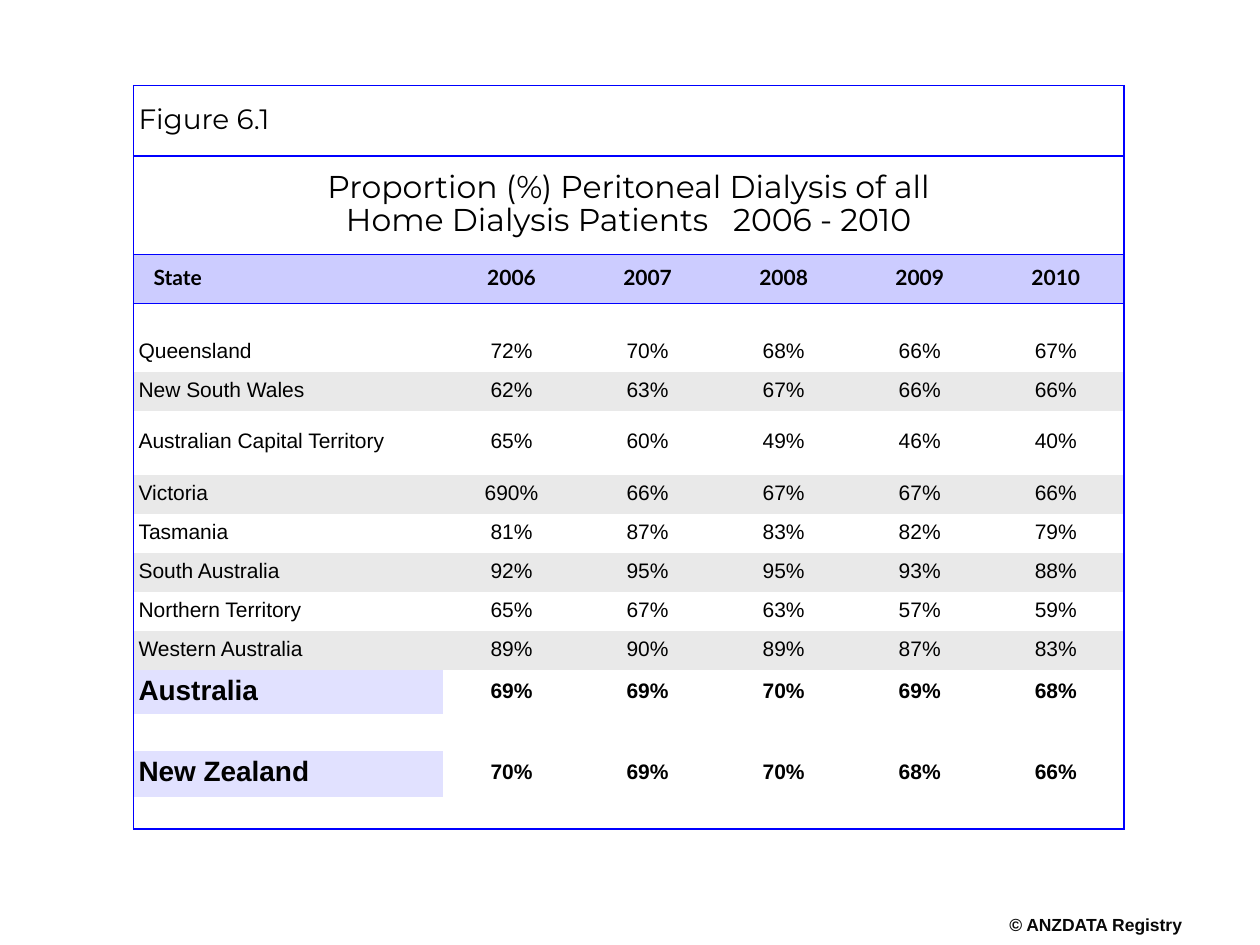
from lxml import etree
from pptx import Presentation
from pptx.dml.color import RGBColor
from pptx.enum.text import MSO_ANCHOR, PP_ALIGN
from pptx.oxml.ns import qn
from pptx.util import Inches, Pt

BLUE, BLACK = "0000FF", "000000"
HEADER_FILL, BAND_FILL, TOTAL_FILL = "CCCCFF", "E9E9E9", "E1E1FF"
NO_STYLE = "{2D5ABB26-0587-4C30-8999-92F81FD0307C}"

YEARS = ["2006", "2007", "2008", "2009", "2010"]
STATES = [
    ("Queensland", [72, 70, 68, 66, 67]),
    ("New South Wales", [62, 63, 67, 66, 66]),
    ("Australian Capital Territory", [65, 60, 49, 46, 40]),
    ("Victoria", [690, 66, 67, 67, 66]),
    ("Tasmania", [81, 87, 83, 82, 79]),
    ("South Australia", [92, 95, 95, 93, 88]),
    ("Northern Territory", [65, 67, 63, 57, 59]),
    ("Western Australia", [89, 90, 89, 87, 83]),
]
COUNTRIES = {12: ("Australia", [69, 69, 70, 69, 68]),
             14: ("New Zealand", [70, 69, 70, 68, 66])}
COLUMN_WIDTHS = [2.46] + [1.08] * 5
ROW_HEIGHTS = [0.56, 0.78, 0.39, 0.23, 0.31, 0.31, 0.51] + [0.31] * 5 + [0.35, 0.29, 0.37, 0.25]
TITLE_ROWS, HEADER_ROW, FIRST_STATE_ROW = 2, 2, 4
SPACER_ROWS = [3, 13, 15]


def rgb(color):
    return RGBColor.from_string(color)


def format_text(frame, size, font, color=BLACK, bold=False, align=PP_ALIGN.LEFT, after=0):
    for paragraph in frame.paragraphs:
        paragraph.alignment = align
        paragraph.line_spacing = 0.85
        paragraph.space_after = Pt(after)
        for run in paragraph.runs:
            run.font.size = Pt(size)
            run.font.name = font
            run.font.bold = bold
            run.font.color.rgb = rgb(color)


def set_borders(cell, sides):
    properties = cell._tc.get_or_add_tcPr()
    for side in "LRTB":
        line = etree.SubElement(properties, qn(f"a:ln{side}"), w=str(Pt(1)))
        if side in sides:
            fill = etree.SubElement(line, qn("a:solidFill"))
            etree.SubElement(fill, qn("a:srgbClr"), val=BLUE)
        else:
            etree.SubElement(line, qn("a:noFill"))


def prepare_cell(table, row, column):
    """Give a cell its margins, anchor, outer frame and the rules of the heading rows."""
    cell = table.cell(row, column)
    cell.margin_left = cell.margin_right = Inches(0.04)
    cell.margin_top = cell.margin_bottom = Inches(0.02)
    cell.vertical_anchor = MSO_ANCHOR.MIDDLE
    ruled = {"L": column == 0 or row < TITLE_ROWS,
             "R": column == len(COLUMN_WIDTHS) - 1 or row < TITLE_ROWS,
             "T": row <= HEADER_ROW + 1,
             "B": row <= HEADER_ROW or row == len(ROW_HEIGHTS) - 1}
    set_borders(cell, [side for side, shown in ruled.items() if shown])
    cell.fill.background()
    if row in SPACER_ROWS:
        paragraph = cell.text_frame.paragraphs[0]
        etree.SubElement(paragraph._p, qn("a:endParaRPr"), sz="800")


def fill_cell(cell, text, fill=None, **style):
    cell.text_frame.text = text
    format_text(cell.text_frame, **style)
    if fill:
        cell.fill.solid()
        cell.fill.fore_color.rgb = rgb(fill)


def add_title_rows(table):
    for row in range(TITLE_ROWS):
        table.cell(row, 0).merge(table.cell(row, len(COLUMN_WIDTHS) - 1))
    fill_cell(table.cell(0, 0), "Figure 6.1", size=16, font="Montserrat")
    title = table.cell(1, 0)
    title.text_frame.text = "Proportion (%) Peritoneal Dialysis of all\nHome Dialysis Patients"
    period = title.text_frame.paragraphs[1]
    gap = period.add_run()
    gap.text = " "
    gap.font._element.set("spc", "940")
    period.add_run().text = "2006 - 2010"
    format_text(title.text_frame, 18, "Montserrat", align=PP_ALIGN.CENTER)


def add_header_row(table):
    for column, heading in enumerate(["State"] + YEARS):
        fill_cell(table.cell(HEADER_ROW, column), heading, HEADER_FILL, size=12, font="Lato",
                  bold=True, align=PP_ALIGN.CENTER if column else PP_ALIGN.LEFT)
    table.cell(HEADER_ROW, 0).margin_left = Inches(0.16)


def add_data_row(table, row, region, shares, label_fill=None, share_fill=None,
                 label_size=12, bold=False):
    fill_cell(table.cell(row, 0), region, label_fill, size=label_size, font="Arial",
              bold=bold, after=14)
    for column, share in enumerate(shares, 1):
        fill_cell(table.cell(row, column), f"{share}%", share_fill, size=12, font="Arial",
                  bold=bold, align=PP_ALIGN.CENTER, after=14)


def add_dialysis_table(slide, left, top, width, height):
    table = slide.shapes.add_table(len(ROW_HEIGHTS), len(COLUMN_WIDTHS), Inches(left),
                                   Inches(top), Inches(width), Inches(height)).table
    table.first_row = table.horz_banding = False
    table._tbl.tblPr.find(qn("a:tableStyleId")).text = NO_STYLE
    for column, column_width in zip(table.columns, COLUMN_WIDTHS):
        column.width = Inches(column_width)
    for row, row_height in zip(table.rows, ROW_HEIGHTS):
        row.height = Inches(row_height)
    for row in range(len(ROW_HEIGHTS)):
        for column in range(len(COLUMN_WIDTHS)):
            prepare_cell(table, row, column)

    add_title_rows(table)
    add_header_row(table)
    for index, (state, shares) in enumerate(STATES):
        band = BAND_FILL if index % 2 else None
        add_data_row(table, FIRST_STATE_ROW + index, state, shares, band, band)
    for row, (country, shares) in COUNTRIES.items():
        add_data_row(table, row, country, shares, TOTAL_FILL, label_size=16, bold=True)


def add_copyright(slide, left, top, width, height):
    frame = slide.shapes.add_textbox(Inches(left), Inches(top), Inches(width),
                                     Inches(height)).text_frame
    frame.margin_left = frame.margin_right = frame.margin_top = frame.margin_bottom = 0
    frame.word_wrap = False
    frame.text = "© ANZDATA Registry"
    format_text(frame, 10, "Arial", "080808", bold=True, align=PP_ALIGN.CENTER)


def main():
    presentation = Presentation()
    presentation.slide_width = Inches(10)
    presentation.slide_height = Inches(7.5)
    slide = presentation.slides.add_slide(presentation.slide_layouts[6])
    add_copyright(slide, 7.99, 7.28, 1.41, 0.17)
    add_dialysis_table(slide, 1.06, 0.68, 7.87, 5.92)
    presentation.save("out.pptx")


if __name__ == "__main__":
    main()
